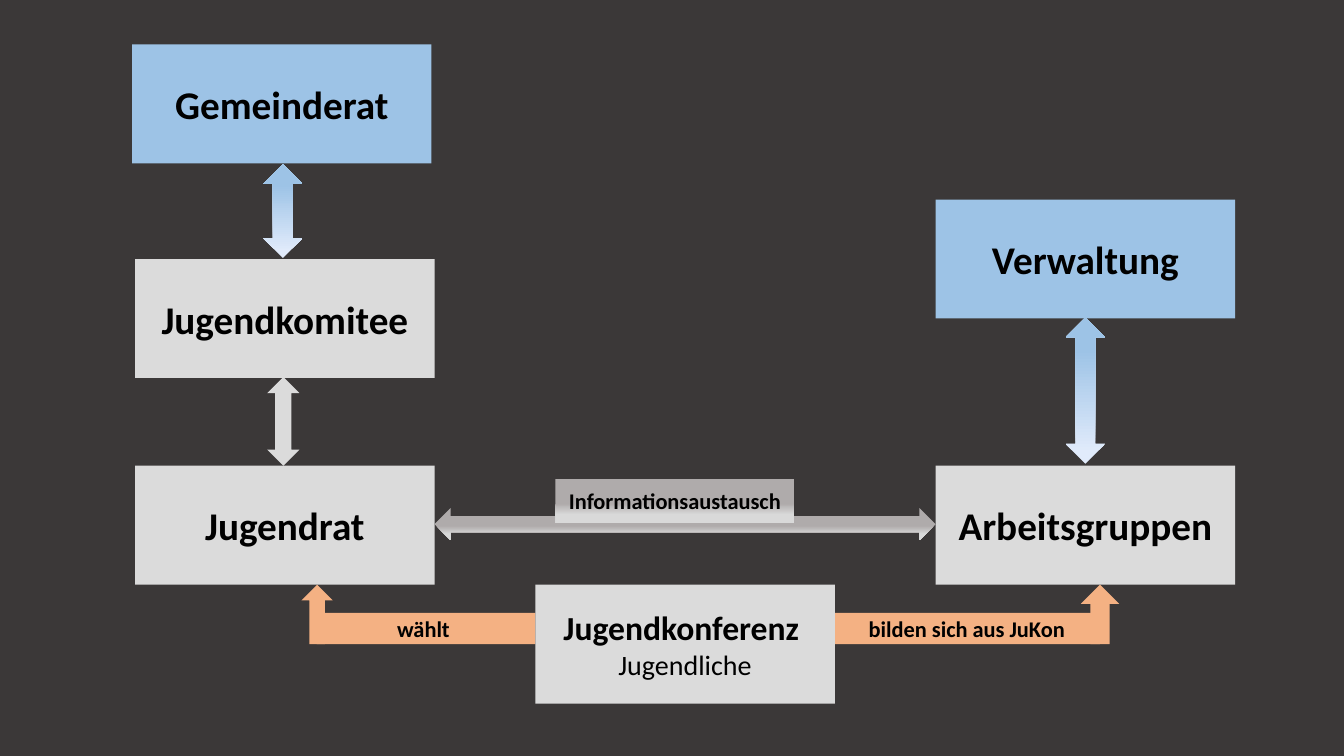
from pptx import Presentation
from pptx.dml.color import RGBColor
from pptx.enum.shapes import MSO_SHAPE
from pptx.enum.text import MSO_ANCHOR, PP_ALIGN
from pptx.util import Inches, Pt

BACKGROUND = RGBColor(0x3B, 0x38, 0x38)
BLACK = RGBColor(0x00, 0x00, 0x00)
GRAY = RGBColor(0xDB, 0xDB, 0xDB)
BLUE = RGBColor(0x9D, 0xC3, 0xE6)
PALE_BLUE = RGBColor(0xE1, 0xEB, 0xFB)
ORANGE = RGBColor(0xF4, 0xB1, 0x83)
DARK_GRAY = RGBColor(0xAF, 0xAB, 0xAB)
LIGHT_GRAY = RGBColor(0xD9, 0xD9, 0xD9)

# Gradients: (position, colour) stops and the counter-clockwise angle
BLUE_FADE = ([(0.07, PALE_BLUE), (0.78, BLUE)], 90)
GRAY_FADE = ([(0.56, DARK_GRAY), (0.81, LIGHT_GRAY)], 270)

BOX_WIDTH, BOX_HEIGHT = 2.97, 1.18
LEFT_COLUMN, RIGHT_COLUMN = 1.34, 9.28
BOTTOM_ROW = 4.62


class Diagram:
    """Draws the parts of the organisation chart on one page."""

    font = "Calibri"

    def __init__(self, page):
        self.page = page
        page.background.fill.solid()
        page.background.fill.fore_color.rgb = BACKGROUND

    def group(self):
        return self.page.shapes.add_group_shape().shapes

    def shape(self, kind, left, top, width, height, paint, parent=None):
        shapes = self.page.shapes if parent is None else parent
        shape = shapes.add_shape(
            kind, Inches(left), Inches(top), Inches(width), Inches(height))
        shape.shadow.inherit = False
        shape.line.fill.background()
        if isinstance(paint, RGBColor):
            shape.fill.solid()
            shape.fill.fore_color.rgb = paint
        else:
            stops, angle = paint
            shape.fill.gradient()
            shape.fill.gradient_angle = angle
            for stop, (position, color) in zip(shape.fill.gradient_stops, stops):
                stop.position = position
                stop.color.rgb = color
        return shape

    def label(self, left, top, width, height, paint, lines, parent=None):
        """Rectangle with centred lines of (text, size, bold)."""
        box = self.shape(MSO_SHAPE.RECTANGLE, left, top, width, height, paint, parent)
        frame = box.text_frame
        frame.word_wrap = True
        frame.vertical_anchor = MSO_ANCHOR.MIDDLE
        frame.text = "\n".join(text for text, _, _ in lines)
        for para, (_, size, bold) in zip(frame.paragraphs, lines):
            para.alignment = PP_ALIGN.CENTER
            for span in para.runs:
                span.font.name = self.font
                span.font.size = Pt(size)
                span.font.bold = bold
                span.font.color.rgb = BLACK

    def body(self, name, left, top, color):
        self.label(left, top, BOX_WIDTH, BOX_HEIGHT, color, [(name, 28, True)])

    def exchange(self, left, top, width, height, paint):
        self.shape(MSO_SHAPE.UP_DOWN_ARROW, left, top, width, height, paint)

    def bent_arrow(self, text, bar_left, bar_width, head_left, head_width):
        """Labelled bar that ends in an upward arrow."""
        parent = self.group()
        self.label(bar_left, 6.08, bar_width, 0.31, ORANGE, [(text, 16, True)], parent)
        head = self.shape(
            MSO_SHAPE.DOWN_ARROW, head_left, 5.8, head_width, 0.59, ORANGE, parent)
        head.rotation = 180


def main():
    deck = Presentation()
    deck.slide_width, deck.slide_height = Inches(13.33), Inches(7.5)
    diagram = Diagram(deck.slides.add_slide(deck.slide_layouts[6]))

    # Youth conference and what comes out of it
    diagram.bent_arrow("wählt ", 3.14, 2.17, 2.99, 0.31)
    diagram.bent_arrow("bilden sich aus JuKon", 8.27, 2.64, 10.72, 0.38)
    diagram.label(5.31, 5.8, BOX_WIDTH, BOX_HEIGHT, GRAY,
                  [("Jugendkonferenz ", 24, True), ("Jugendliche", 20, False)])

    # Bottom row and its exchange of information
    diagram.body("Jugendrat", LEFT_COLUMN, BOTTOM_ROW, GRAY)
    diagram.body("Arbeitsgruppen", RIGHT_COLUMN, BOTTOM_ROW, GRAY)
    information = diagram.group()
    diagram.shape(MSO_SHAPE.LEFT_RIGHT_ARROW, 4.31, 5.04, 4.97, 0.32,
                  GRAY_FADE, information)
    diagram.label(5.51, 4.75, 2.37, 0.44, GRAY_FADE,
                  [("Informationsaustausch", 16, True)], information)

    # Right column
    diagram.body("Verwaltung", RIGHT_COLUMN, 1.98, BLUE)
    diagram.exchange(10.57, 3.15, 0.39, 1.45, BLUE_FADE)

    # Left column
    diagram.body("Jugendkomitee", LEFT_COLUMN, 2.57, GRAY)
    diagram.exchange(2.65, 3.74, 0.32, 0.88, GRAY)
    diagram.body("Gemeinderat", 1.31, 0.44, BLUE)
    diagram.exchange(2.61, 1.63, 0.39, 0.93, BLUE_FADE)

    deck.save("out.pptx")


if __name__ == "__main__":
    main()
